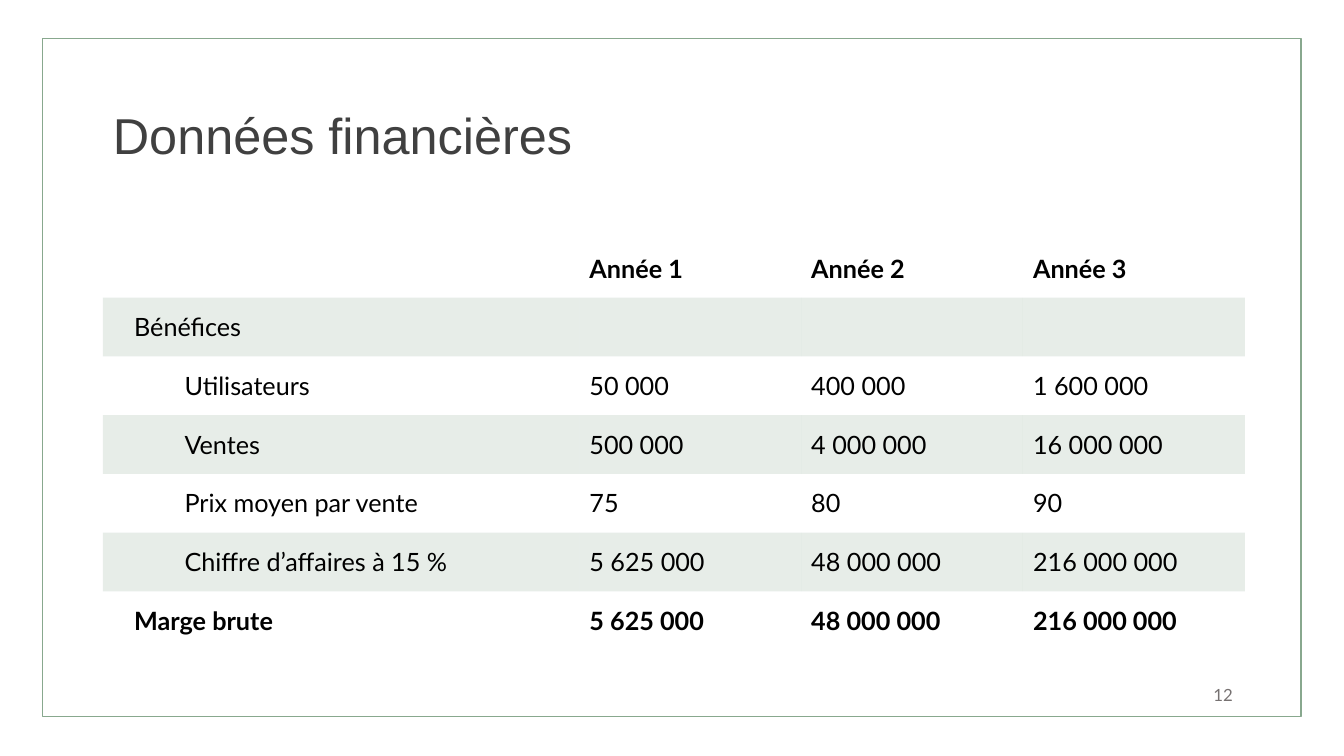
from pptx import Presentation
from pptx.dml.color import RGBColor
from pptx.enum.shapes import MSO_SHAPE
from pptx.enum.text import MSO_ANCHOR, PP_ALIGN
from pptx.oxml.xmlchemy import OxmlElement
from pptx.util import Cm, Pt

RECTANGLE = MSO_SHAPE.RECTANGLE
MIDDLE = MSO_ANCHOR.MIDDLE
LEFT, RIGHT = PP_ALIGN.LEFT, PP_ALIGN.RIGHT

SAGE = RGBColor(0x88, 0xA8, 0x8E)
CHARCOAL = RGBColor(0x40, 0x40, 0x40)
GREY = RGBColor(0x76, 0x71, 0x71)
BLACK = RGBColor(0, 0, 0)

PLAIN_TABLE_STYLE = "{2D5ABB26-0587-4C30-8999-92F81FD0307C}"
BAND_OPACITY = 20
COLUMN_WIDTHS = [12.01, 5.59, 5.59, 5.59]
ROW_HEIGHT = 1.48
LABEL_MARGIN = 0.79
SUBITEM_INDENT = 1.27

FINANCES = [
    ["", "Année 1", "Année 2", "Année 3"],
    ["Bénéfices", "", "", ""],
    ["Utilisateurs", "50 000", "400 000", "1 600 000"],
    ["Ventes", "500 000", "4 000 000", "16 000 000"],
    ["Prix moyen par vente", "75", "80", "90"],
    ["Chiffre d’affaires à 15 %", "5 625 000", "48 000 000", "216 000 000"],
    ["Marge brute", "5 625 000", "48 000 000", "216 000 000"],
]
BOLD_ROWS = {0, len(FINANCES) - 1}
SUBITEM_ROWS = range(2, len(FINANCES) - 1)


class SlideBuilder:
    heading_font = "Arial"
    body_font = "Lato"

    def __init__(self, page):
        self.page = page

    def set_text(self, frame, text, size, color, font=None, bold=False,
                 align=LEFT):
        frame.text = text
        paragraph = frame.paragraphs[0]
        paragraph.alignment = align
        for span in paragraph.runs:
            span.font.name = font or self.body_font
            span.font.size = Pt(size)
            span.font.bold = bold
            span.font.color.rgb = color
        return paragraph

    def frame(self, left, top, width, height):
        """Draw the outline behind everything else on the page."""
        border = self.page.shapes.add_shape(
            RECTANGLE, Cm(left), Cm(top), Cm(width), Cm(height))
        border.shadow.inherit = False
        border.fill.background()
        border.line.color.rgb = SAGE
        border.line.width = Pt(1)
        self.page.shapes._spTree.insert(2, border._element)

    def title(self, text, left, top, width, height):
        box = self.page.shapes.title
        box.left, box.top = Cm(left), Cm(top)
        box.width, box.height = Cm(width), Cm(height)
        box.text_frame.vertical_anchor = MIDDLE
        paragraph = self.set_text(
            box.text_frame, text, 36, CHARCOAL, self.heading_font)
        paragraph.line_spacing = 0.9

    def page_number(self, text, left, top, width, height):
        box = self.page.shapes.add_textbox(
            Cm(left), Cm(top), Cm(width), Cm(height))
        box.text_frame.word_wrap = True
        box.text_frame.vertical_anchor = MIDDLE
        self.set_text(box.text_frame, text, 12, GREY, align=RIGHT)

    def table(self, rows, left, top):
        holder = self.page.shapes.add_table(
            len(rows), len(COLUMN_WIDTHS), Cm(left), Cm(top),
            Cm(sum(COLUMN_WIDTHS)), Cm(ROW_HEIGHT * len(rows)))
        table = holder.table
        table.first_row = table.horz_banding = False
        table._tbl.tblPr[0].text = PLAIN_TABLE_STYLE
        for column, width in zip(table.columns, COLUMN_WIDTHS):
            column.width = Cm(width)
        for row_index, texts in enumerate(rows):
            table.rows[row_index].height = Cm(ROW_HEIGHT)
            for column_index, text in enumerate(texts):
                cell = table.cell(row_index, column_index)
                cell.vertical_anchor = MIDDLE
                paragraph = self.set_text(cell.text_frame, text, 18, BLACK,
                                          bold=row_index in BOLD_ROWS)
                if column_index == 0 and text:
                    cell.margin_left = Cm(LABEL_MARGIN)
                    if row_index in SUBITEM_ROWS:
                        self.indent(paragraph)
                if row_index % 2:
                    self.tint(cell)
                else:
                    cell.fill.background()

    def indent(self, paragraph):
        paragraph.level = 1
        properties = paragraph._p.get_or_add_pPr()
        properties.set("marL", str(Cm(SUBITEM_INDENT)))
        properties.set("indent", "0")

    def tint(self, cell):
        """Give the cell a translucent sage fill."""
        cell.fill.solid()
        cell.fill.fore_color.rgb = SAGE
        alpha = OxmlElement("a:alpha")
        alpha.set("val", str(BAND_OPACITY * 1000))
        cell._tc.tcPr.find(".//{*}srgbClr").append(alpha)


def main():
    deck = Presentation()
    deck.slide_width, deck.slide_height = Cm(33.87), Cm(19.05)
    title_only = deck.slide_layouts[5]
    builder = SlideBuilder(deck.slides.add_slide(title_only))
    builder.frame(1.07, 0.97, 31.72, 17.09)
    builder.title("Données financières", 2.59, 1.35, 28.7, 4.24)
    builder.table(FINANCES, 2.59, 6.02)
    builder.page_number("12", 23.7, 16.99, 7.62, 1.02)
    deck.save("out.pptx")


if __name__ == "__main__":
    main()
